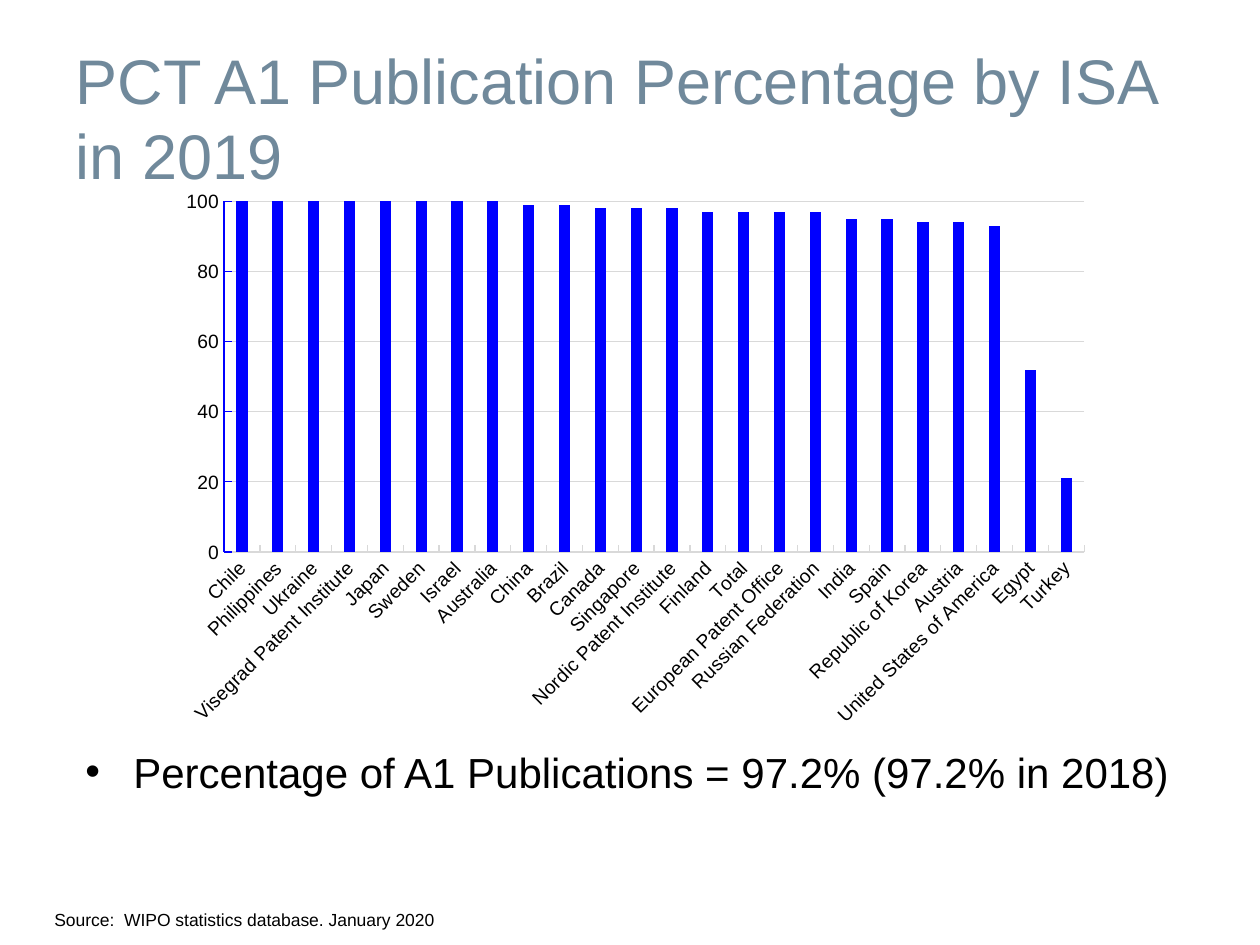
from lxml import etree
from pptx import Presentation
from pptx import util as u
from pptx.chart import data
from pptx.dml.color import RGBColor
from pptx.enum import chart as ch
from pptx.enum import text
from pptx.oxml import parse_xml
from pptx.oxml import ns

SCALE = 914400 / 126
SLATE = RGBColor(0x70, 0x89, 0x9B)
BLACK = RGBColor(0, 0, 0)
BLUE = RGBColor(0, 0, 255)
GREY = RGBColor(0xD9, 0xD9, 0xD9)

SHARES = {
    "Chile": 100, "Philippines": 100, "Ukraine": 100,
    "Visegrad Patent Institute": 100, "Japan": 100, "Sweden": 100,
    "Israel": 100, "Australia": 100, "China": 99, "Brazil": 99,
    "Canada": 98, "Singapore": 98, "Nordic Patent Institute": 98,
    "Finland": 97, "Total": 97, "European Patent Office": 97,
    "Russian Federation": 97, "India": 95, "Spain": 95,
    "Republic of Korea": 94, "Austria": 94,
    "United States of America": 93, "Egypt": 52, "Turkey": 21,
}


def px(*lengths):
    return [u.Emu(round(length * SCALE)) for length in lengths]


def set_font(font, size, color):
    for key, value in {"name": "Arial", "size": u.Pt(size), "bold": False}.items():
        setattr(font, key, value)
    font.color.rgb = color


prs = Presentation()
prs.slide_width, prs.slide_height = px(1260, 945)
slide = prs.slides.add_slide(prs.slide_layouts[5])

title = slide.shapes.title
summary = slide.shapes.add_textbox(*px(73, 740, 1134, 102))
source = slide.shapes.add_textbox(*px(42, 903, 630, 34))
title.left, title.top, title.width, title.height = px(63, 38, 1134, 158)

for box, wording, size, color, anchor in (
    (title, "PCT A1 Publication Percentage by ISA in 2019", 36, SLATE, text.MSO_ANCHOR.MIDDLE),
    (summary, "Percentage of A1 Publications = 97.2% (97.2% in 2018)", 24, BLACK, text.MSO_ANCHOR.TOP),
    (source, "Source:  WIPO statistics database. January 2020", 10, BLACK, text.MSO_ANCHOR.TOP),
):
    frame = box.text_frame
    frame.text = wording
    for key, value in {
        "word_wrap": True,
        "auto_size": text.MSO_AUTO_SIZE.NONE,
        "vertical_anchor": anchor,
    }.items():
        setattr(frame, key, value)
    paragraph = frame.paragraphs[0]
    paragraph.alignment = text.PP_ALIGN.LEFT
    set_font(paragraph.runs[0].font, size, color)

indent = px(48)[0]
bullet_format = summary.text_frame.paragraphs[0]._p.get_or_add_pPr()
bullet_format.set("marL", str(indent))
bullet_format.set("indent", str(-indent))
etree.SubElement(bullet_format, ns.qn("a:buFont")).set("typeface", "Arial")
etree.SubElement(bullet_format, ns.qn("a:buChar")).set("char", "•")

shares = data.CategoryChartData(number_format="0")
shares.categories = list(SHARES)
shares.add_series("Series 1", list(SHARES.values()))
chart = slide.shapes.add_chart(
    ch.XL_CHART_TYPE.COLUMN_CLUSTERED, *px(168, 179, 935, 557), shares
).chart
chart.has_title = False
chart.has_legend = False
set_font(chart.font, 10, BLACK)

plot = chart.plots[0]
for key, value in {"gap_width": 219, "overlap": -27, "vary_by_categories": False}.items():
    setattr(plot, key, value)
bars = plot.series[0].format
bars.fill.solid()
bars.fill.fore_color.rgb = BLUE

offices = chart.category_axis
percent = chart.value_axis
for axis, color in ((offices, GREY), (percent, BLUE)):
    axis.major_tick_mark = ch.XL_TICK_MARK.INSIDE
    axis.minor_tick_mark = ch.XL_TICK_MARK.NONE
    set_font(axis.tick_labels.font, 11, BLACK)
    axis.format.line.color.rgb = color
    axis.format.line.width = u.Pt(0.75)
for key, value in {
    "minimum_scale": 0,
    "maximum_scale": 100,
    "major_unit": 20,
    "has_major_gridlines": True,
}.items():
    setattr(percent, key, value)
percent.major_gridlines.format.line.color.rgb = GREY
percent.major_gridlines.format.line.width = u.Pt(0.75)
offices._element.find(ns.qn("c:txPr")).find(ns.qn("a:bodyPr")).set("rot", "-2700000")

plot_area = chart._chartSpace.chart.plotArea
for old_layout in plot_area.findall(ns.qn("c:layout")):
    plot_area.remove(old_layout)
plot_area.insert(0, parse_xml(
    f'<c:layout {ns.nsdecls("c")}><c:manualLayout><c:layoutTarget val="inner"/>'
    '<c:xMode val="edge"/><c:yMode val="edge"/><c:x val="0.06"/><c:y val="0.04"/>'
    '<c:w val="0.92"/><c:h val="0.63"/></c:manualLayout></c:layout>'
))

prs.save("out.pptx")
